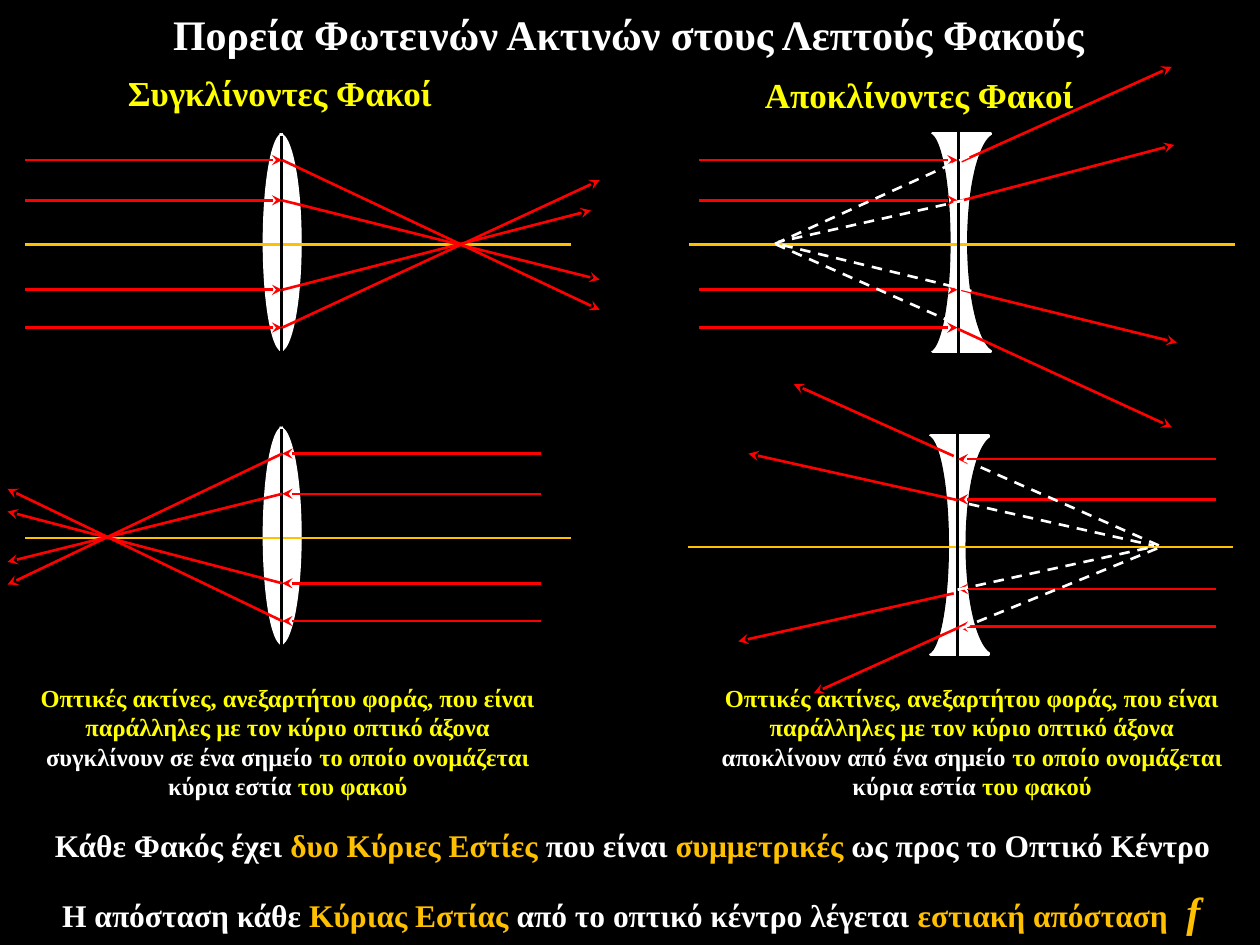
from dataclasses import dataclass

from lxml import etree
from pptx import Presentation
from pptx.dml.color import RGBColor
from pptx.enum.dml import MSO_LINE
from pptx.enum.shapes import MSO_CONNECTOR, MSO_SHAPE
from pptx.enum.text import PP_ALIGN
from pptx.oxml.ns import qn
from pptx.util import Pt

ARC = MSO_SHAPE.ARC
RECT = MSO_SHAPE.RECTANGLE
LINE = MSO_CONNECTOR.STRAIGHT
DASH = MSO_LINE.DASH
CENTER = PP_ALIGN.CENTER


@dataclass(frozen=True)
class Theme:
    font: str = "Times New Roman"
    black: str = "000000"
    white: str = "FFFFFF"
    yellow: str = "FFFF00"
    gold: str = "FFC000"
    red: str = "FF0000"
    title: int = 24
    head: int = 20
    body: int = 18
    note: int = 14
    line: float = 1.5


class Board:
    def __init__(self, slide, theme):
        self.slide = slide
        self.theme = theme
        back = slide.background.fill
        back.solid()
        back.fore_color.rgb = RGBColor.from_string(theme.black)

    def text(self, box, size, *parts):
        frame = self.slide.shapes.add_textbox(*map(Pt, box)).text_frame
        frame.word_wrap = True
        para = frame.paragraphs[0]
        para.alignment = CENTER
        for words, color in parts:
            run = para.add_run()
            run.text = words
            font = run.font
            font.name = self.theme.font
            font.size = Pt(size)
            font.bold = True
            font.color.rgb = RGBColor.from_string(color)
        return para

    def shape(self, kind, box, color, width):
        item = self.slide.shapes.add_shape(kind, *map(Pt, box))
        item.shadow.inherit = False
        item.fill.solid()
        item.fill.fore_color.rgb = RGBColor.from_string(color)
        item.line.color.rgb = RGBColor.from_string(color)
        item.line.width = Pt(width)
        return item

    def arc(self, box, color, flip=False):
        item = self.shape(ARC, box, color, 0.75)
        item.adjustments[0] = 162
        item.adjustments[1] = 53.74
        if flip:
            item.element.spPr.find(qn("a:xfrm")).set("flipH", "1")

    def line(self, ends, color, dash=False, arrow=False):
        item = self.slide.shapes.add_connector(LINE, *map(Pt, ends))
        item.line.color.rgb = RGBColor.from_string(color)
        item.line.width = Pt(self.theme.line)
        if dash:
            item.line.dash_style = DASH
        if arrow:
            tail = etree.SubElement(item.line._get_or_add_ln(), qn("a:tailEnd"))
            tail.set("type", "stealth")
        etree.SubElement(item.element.spPr, qn("a:effectLst"))

    def ray(self, *ends):
        self.line(ends, self.theme.red, arrow=True)

    def beam(self, start, end, mid):
        for step in STEPS:
            self.ray(start, mid + step, end, mid + step)

    def convex(self, mid):
        top = mid - 63.4
        self.arc((147.6, top, 24.5, 124.6), self.theme.white)
        self.arc((150.5, top, 22.3, 124.6), self.theme.white, flip=True)
        self.line((14.4, mid, 326.2, mid), self.theme.gold)
        self.line((161, mid - 62, 161, mid + 62.6), self.theme.black)

    def concave(self, mid, shift=0):
        top = mid - 63.4
        self.shape(RECT, (532.8 + shift, top, 33.1, 124.6), self.theme.white, 2)
        self.arc((518.4 + shift, top, 24.5, 124.6), self.theme.black)
        self.arc((553 + shift, top, 33.8, 124.6), self.theme.black, flip=True)
        self.line((393.8 + shift, mid, 705.6 + shift, mid), self.theme.gold)
        x = 547.9 + shift
        self.line((x, mid - 64.8, x, mid + 62.6), self.theme.black)

    def note(self, left, verb):
        hot, pale = self.theme.yellow, self.theme.white
        self.text((left, 386.6, 311.8, 74.9), self.theme.note,
                  ("Οπτικές ακτίνες, ανεξαρτήτου φοράς, που είναι "
                   "παράλληλες με τον κύριο οπτικό άξονα ", hot),
                  (verb + " ένα σημείο ", pale),
                  ("το οποίο ονομάζεται ", hot),
                  ("κύρια εστία ", pale),
                  ("του φακού", hot))


STEPS = (-48.2, -25.2, 25.9, 47.5)
HIGH, LOW, DEEP = 139.7, 307.4, 312.5

MEET = (
    (14.4, 161.3, HIGH,
     ((342.7, 177.1), (342.7, 159.8), (337.7, 120.2), (342.7, 103))),
    (308.9, 161.3, LOW,
     ((4.3, 334.1), (4.3, 321.1), (4.3, 292.3), (4.3, 279.4))),
)

PART = (
    (399.6, HIGH, HIGH, 0,
     ((549.4, 92.2, 669.6, 38.2), (547.2, 115.2, 671, 82.8),
      (549.4, 165.6, 672.5, 195.8), (547.2, 187.9, 669.6, 244.1)),
     ((553.7, 89.3, 442.8, 139.4), (550.8, 114.5, 445, 138.2),
      (555.1, 166.3, 445.7, 139.7), (554.4, 188.6, 443.5, 139.7))),
    (694.8, DEEP, 310.6, -0.9,
     ((545, 260.6, 453.6, 219.6), (547.2, 285.8, 427.7, 259.2),
      (545, 339.1, 421.9, 366.5), (547.9, 358.6, 465.1, 396)),
     ((550.8, 262.8, 662.4, 311.8), (553.7, 288, 659.5, 311.8),
      (547.2, 337, 658.8, 312.5), (548.6, 359.3, 661.7, 313.2))),
)


def main():
    deck = Presentation()
    deck.slide_width, deck.slide_height = Pt(720), Pt(540)
    theme = Theme()
    board = Board(deck.slides.add_slide(deck.slide_layouts[6]), theme)
    white, gold = theme.white, theme.gold

    board.text((-0.7, 1.4, 720, 33.8), theme.title,
               ("Πορεία Φωτεινών Ακτινών στους Λεπτούς Φακούς", white))
    board.text((59.8, 37.4, 200.2, 31.7), theme.head,
               ("Συγκλίνοντες Φακοί", theme.yellow))
    board.text((425.2, 38.2, 200.2, 31.7), theme.head,
               ("Αποκλίνοντες Φακοί", theme.yellow))

    for start, lens, mid, ends in MEET:
        board.convex(mid)
        board.beam(start, lens, mid)
        for step, end in zip(STEPS, ends):
            board.ray(lens, mid + step, *end)

    for start, mid, base, shift, rays, trails in PART:
        board.concave(mid, shift)
        board.beam(start, 547.2, base)
        for ray in rays:
            board.ray(*ray)
        for trail in trails:
            board.line(trail, white, dash=True)

    board.note(8.6, "συγκλίνουν σε")
    board.note(399.6, "αποκλίνουν από")

    board.text((2.9, 468.7, 717.1, 28.8), theme.body,
               ("Κάθε Φακός έχει ", white),
               ("δυο Κύριες Εστίες ", gold),
               ("που είναι ", white),
               ("συμμετρικές", gold),
               (" ως προς το Οπτικό Κέντρο", white))
    last = board.text((2.2, 502.6, 717.1, 36), theme.body,
                      ("Η απόσταση κάθε ", white),
                      ("Κύριας Εστίας ", gold),
                      ("από το οπτικό κέντρο λέγεται ", white),
                      ("εστιακή απόσταση ", gold),
                      (" f", gold))
    mark = last.runs[-1].font
    mark.size = Pt(theme.title)
    mark.italic = True

    deck.save("out.pptx")


if __name__ == "__main__":
    main()
